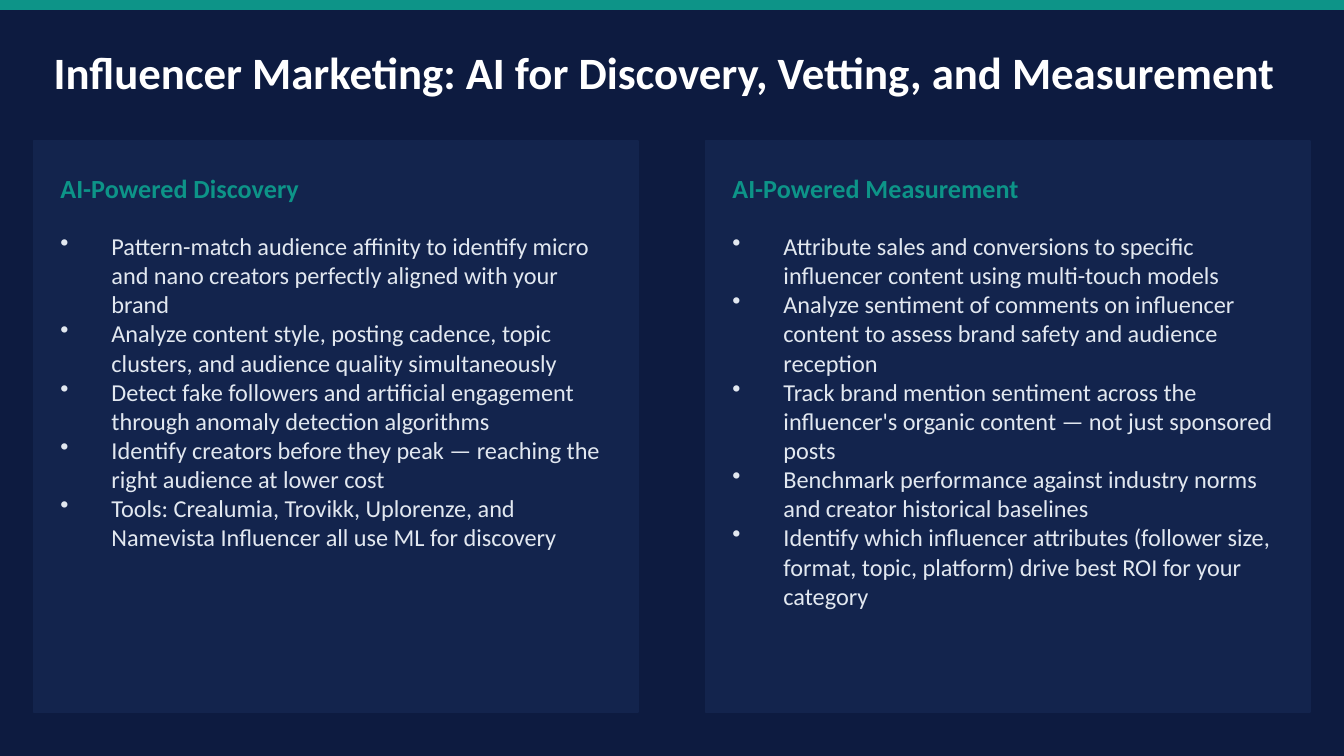
import pptx
import pptx.dml.color
import pptx.enum.shapes
import pptx.enum.text
import pptx.oxml
import pptx.oxml.ns
import pptx.util
from dataclasses import dataclass
from typing import Any

CELL = pptx.util.Inches(0.05)  # grid of 200 columns by 112.5 rows
COLS, ROWS = 200, 112.5
HUES = {
    "navy": "0D1B40",
    "panel": "13244D",
    "teal": "0D9488",
    "white": "FFFFFF",
    "pale": "E2E8F0",
}
STYLES = {
    "title": {"size": pptx.util.Pt(24), "bold": True, "hue": "white"},
    "head": {"size": pptx.util.Pt(14), "bold": True, "hue": "teal"},
    "list": {"size": pptx.util.Pt(13), "bold": False, "hue": "pale"},
}
ANCHOR = pptx.enum.text.MSO_ANCHOR
INDENT = pptx.util.Inches(0.38)


@dataclass
class Box:
    col: float
    row: float
    wide: float
    high: float

    def place(self) -> list[int]:
        return [int(n * CELL) for n in (self.col, self.row, self.wide, self.high)]


@dataclass
class Panel:
    head: str
    items: list[str]


PANELS = [
    Panel("AI-Powered Discovery", [
        "Pattern-match audience affinity to identify micro and nano creators perfectly aligned with your brand",
        "Analyze content style, posting cadence, topic clusters, and audience quality simultaneously",
        "Detect fake followers and artificial engagement through anomaly detection algorithms",
        "Identify creators before they peak — reaching the right audience at lower cost",
        "Tools: Crealumia, Trovikk, Uplorenze, and Namevista Influencer all use ML for discovery",
    ]),
    Panel("AI-Powered Measurement", [
        "Attribute sales and conversions to specific influencer content using multi-touch models",
        "Analyze sentiment of comments on influencer content to assess brand safety and audience reception",
        "Track brand mention sentiment across the influencer's organic content — not just sponsored posts",
        "Benchmark performance against industry norms and creator historical baselines",
        "Identify which influencer attributes (follower size, format, topic, platform) drive best ROI for your category",
    ]),
]


def tint(name: str) -> pptx.dml.color.RGBColor:
    return pptx.dml.color.RGBColor.from_string(HUES[name])


def block(slide: Any, box: Box, hue: str) -> None:
    shape = slide.shapes.add_shape(
        pptx.enum.shapes.MSO_SHAPE.RECTANGLE, *box.place())
    shape.shadow.inherit = False
    shape.fill.solid()
    shape.fill.fore_color.rgb = tint(hue)
    shape.line.color.rgb = tint(hue)
    shape.line.width = pptx.util.Pt(1)


def bullet(para: Any) -> None:
    props = para._p.get_or_add_pPr()
    props.set("marL", str(INDENT))
    props.set("indent", str(-INDENT))
    mark = pptx.oxml.parse_xml(
        f'<a:buChar {pptx.oxml.ns.nsdecls("a")} char="•"/>')
    props.append(mark)


def write(slide: Any, box: Box, lines: list[str], style: str,
          anchor: Any = ANCHOR.MIDDLE, dots: bool = False) -> None:
    frame = slide.shapes.add_textbox(*box.place()).text_frame
    frame.word_wrap = True
    frame.vertical_anchor = anchor
    for side in ("left", "top", "right", "bottom"):
        setattr(frame, f"margin_{side}", 0)
    for i, line in enumerate(lines):
        para = frame.add_paragraph() if i else frame.paragraphs[0]
        if dots:
            bullet(para)
        run = para.add_run()
        run.text = line
        run.font.name = "Calibri"
        for key, value in STYLES[style].items():
            if key == "hue":
                run.font.color.rgb = tint(value)
            else:
                setattr(run.font, key, value)


def main() -> None:
    deck = pptx.Presentation()
    deck.slide_width = int(COLS * CELL)
    deck.slide_height = int(ROWS * CELL)
    slide = deck.slides.add_slide(deck.slide_layouts[6])
    slide.background.fill.solid()
    slide.background.fill.fore_color.rgb = tint("navy")

    # Top bar and title
    block(slide, Box(0, 0, COLS, 1.4), "teal")
    write(slide, Box(8, 3.6, COLS - 16, 14),
          ["Influencer Marketing: AI for Discovery, Vetting, and Measurement"],
          "title")

    # One panel in each half of the slide
    half = COLS / len(PANELS)
    for i, panel in enumerate(PANELS):
        left = i * half + 5
        block(slide, Box(left, 21, half - 10, 85), "panel")
        write(slide, Box(left + 4, 23, half - 18, 10), [panel.head], "head")
        write(slide, Box(left + 4, 34.4, half - 18, 68), panel.items, "list",
              ANCHOR.TOP, dots=True)

    deck.save("out.pptx")


if __name__ == "__main__":
    main()
